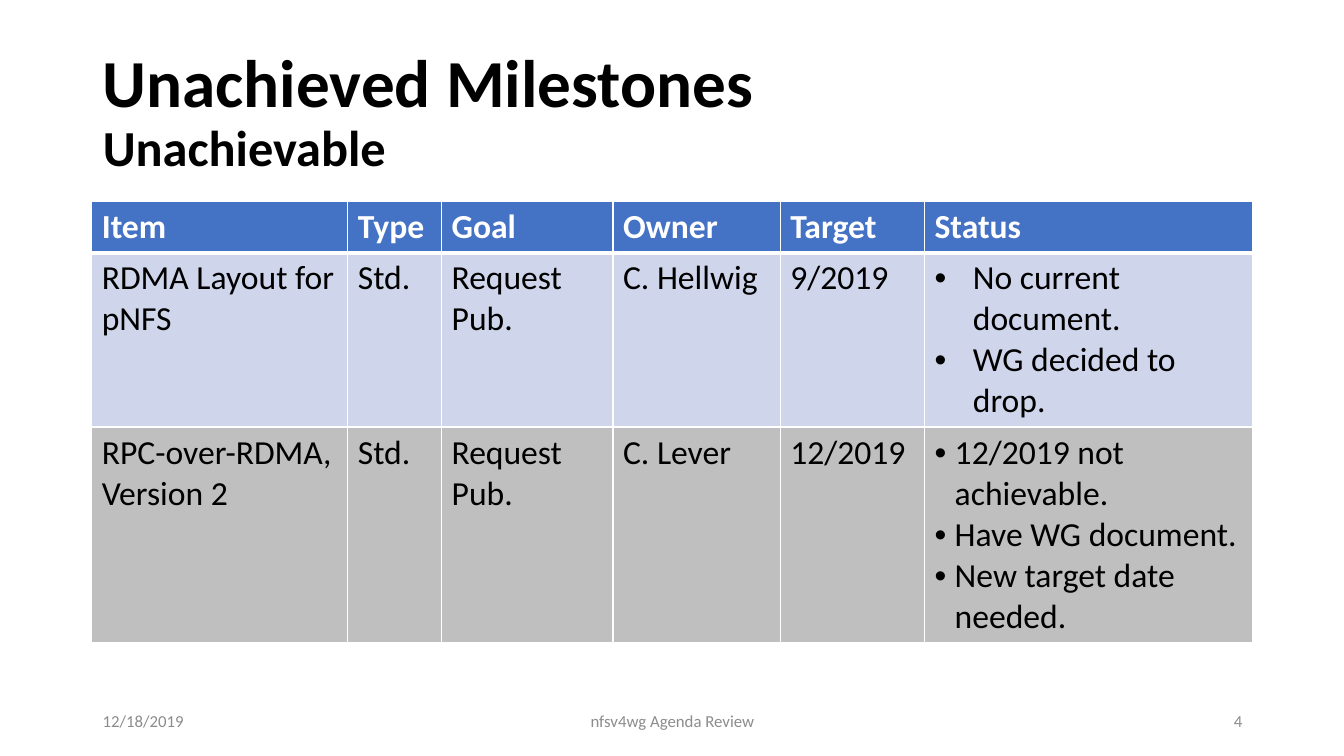
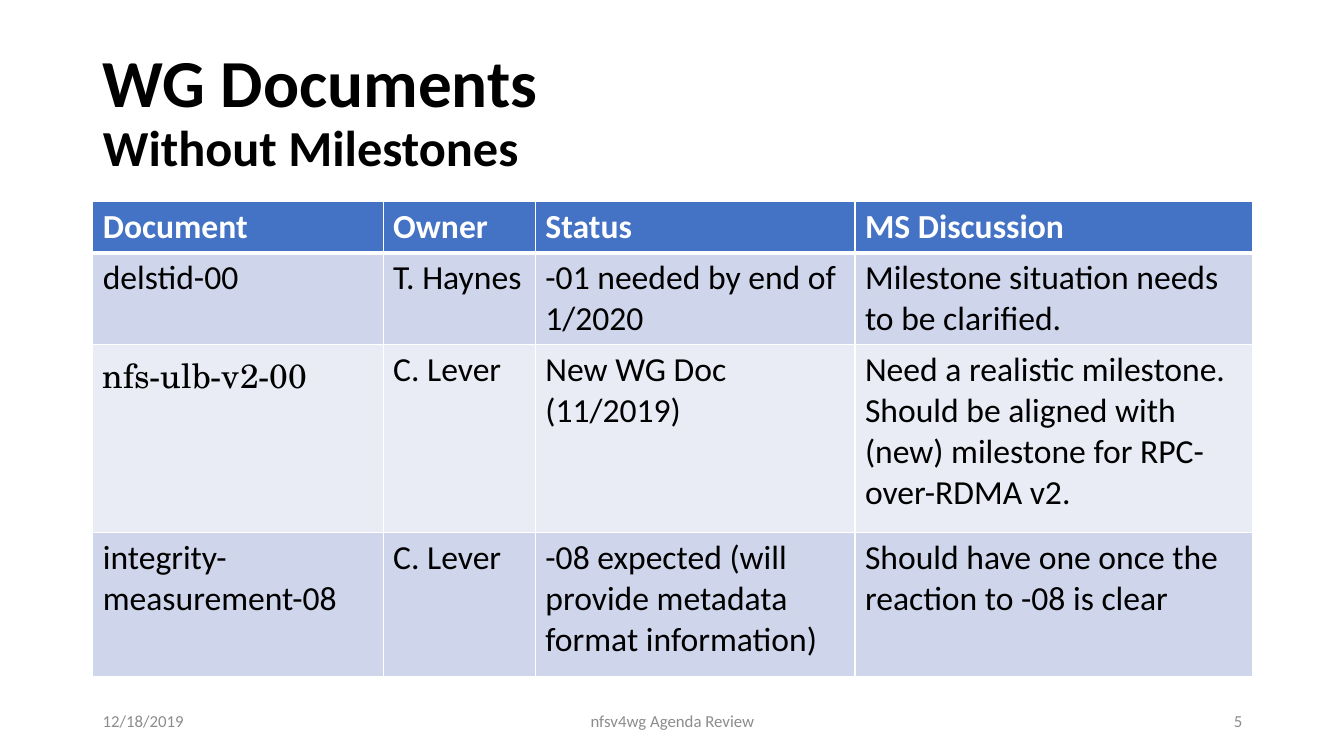
import dataclasses

import lxml.etree
import pptx
import pptx.dml.color
import pptx.enum.text
import pptx.oxml.ns
import pptx.util

Inches = pptx.util.Inches
Pt = pptx.util.Pt
qn = pptx.oxml.ns.qn
Align = pptx.enum.text.PP_ALIGN
Anchor = pptx.enum.text.MSO_ANCHOR


@dataclasses.dataclass(frozen=True)
class Theme:
    font: str = "Calibri"
    serif: str = "TeX Gyre Schola"
    ink: str = "000000"
    white: str = "FFFFFF"
    muted: str = "8C8C8C"
    header: str = "4472C4"
    band: str = "CFD5EA"
    light_band: str = "E9EBF5"
    gray_band: str = "BFBFBF"
    title_size: int = 48
    subtitle_size: int = 36
    table_size: int = 24
    footer_size: int = 12
    rule: int = 1
    header_rule: int = 3


@dataclasses.dataclass(frozen=True)
class Entry:
    lines: tuple
    indent: float = 0
    font: str = Theme.font


THEME = Theme()
TITLE_BOX = (0.92, 0.4, 11.5, 1.45)
FOOTER_BOX = (0.92, 6.95, 11.5, 0.4)
DATE = "12/18/2019"
MEETING = "nfsv4wg Agenda Review"


def rgb(color):
    return pptx.dml.color.RGBColor.from_string(color)


def style_run(run, size, color, bold=False, font=THEME.font):
    run.font.name = font
    run.font.size = Pt(size)
    run.font.bold = bold
    run.font.color.rgb = rgb(color)


def add_title(slide, box, heading, subheading):
    title = slide.shapes.title
    title.left, title.top, title.width, title.height = map(Inches, box)
    frame = title.text_frame
    frame.word_wrap = True
    frame.auto_size = pptx.enum.text.MSO_AUTO_SIZE.NONE
    frame.vertical_anchor = Anchor.MIDDLE
    paragraph = frame.paragraphs[0]
    paragraph.text = f"{heading}\v{subheading}"
    paragraph.alignment = Align.LEFT
    paragraph.line_spacing = 0.9
    for run, size in zip(paragraph.runs, (THEME.title_size, THEME.subtitle_size)):
        style_run(run, size, THEME.ink, bold=True)


def add_footer(slide, box, number):
    left, top, width, height = box
    parts = (
        (DATE, 0, 3, Align.LEFT),
        (MEETING, (width - 4.5) / 2, 4.5, Align.CENTER),
        (str(number), width - 3, 3, Align.RIGHT),
    )
    for text, offset, part_width, alignment in parts:
        part = slide.shapes.add_textbox(
            Inches(left + offset), Inches(top), Inches(part_width), Inches(height))
        frame = part.text_frame
        frame.word_wrap = True
        frame.vertical_anchor = Anchor.MIDDLE
        frame.text = text
        paragraph = frame.paragraphs[0]
        paragraph.alignment = alignment
        style_run(paragraph.runs[0], THEME.footer_size, THEME.muted)


def set_borders(cell, top, bottom):
    properties = cell._tc.get_or_add_tcPr()
    weights = {"lnL": THEME.rule, "lnR": THEME.rule, "lnT": top, "lnB": bottom}
    for position, (side, weight) in enumerate(weights.items()):
        line = lxml.etree.Element(qn(f"a:{side}"), w=str(Pt(weight)))
        fill = lxml.etree.SubElement(line, qn("a:solidFill"))
        lxml.etree.SubElement(fill, qn("a:srgbClr"), val=THEME.white)
        properties.insert(position, line)


def set_bullet(paragraph, indent):
    properties = paragraph._p.get_or_add_pPr()
    properties.set("marL", str(Inches(indent)))
    properties.set("indent", str(-Inches(indent)))
    lxml.etree.SubElement(properties, qn("a:buFont"), typeface="Arial")
    lxml.etree.SubElement(properties, qn("a:buChar"), char="•")


def fill_cell(cell, content, fill, color, bold):
    entry = content if isinstance(content, Entry) else Entry((content,))
    cell.fill.solid()
    cell.fill.fore_color.rgb = rgb(fill)
    cell.text_frame.text = "\n".join(entry.lines)
    for paragraph in cell.text_frame.paragraphs:
        if entry.indent:
            set_bullet(paragraph, entry.indent)
        style_run(paragraph.runs[0], THEME.table_size, color, bold, entry.font)


def add_status_table(slide, origin, columns, heights, bands, rows):
    left, top = origin
    table = slide.shapes.add_table(
        len(rows), len(columns), Inches(left), Inches(top),
        Inches(sum(columns)), Inches(sum(heights))).table
    table.horz_banding = False
    for column, width in zip(table.columns, columns):
        column.width = Inches(width)
    fills = (THEME.header, *bands)
    for index, (contents, height, fill) in enumerate(zip(rows, heights, fills)):
        table.rows[index].height = Inches(height)
        is_header = index == 0
        color = THEME.white if is_header else THEME.ink
        top_rule = THEME.header_rule if index == 1 else THEME.rule
        bottom_rule = THEME.header_rule if is_header else THEME.rule
        for cell, content in zip(table.rows[index].cells, contents):
            fill_cell(cell, content, fill, color, is_header)
            set_borders(cell, top_rule, bottom_rule)


def add_review_slide(deck, number, heading, subheading, **table):
    slide = deck.slides.add_slide(deck.slide_layouts[5])
    add_title(slide, TITLE_BOX, heading, subheading)
    add_status_table(slide, **table)
    add_footer(slide, FOOTER_BOX, number)


def main():
    deck = pptx.Presentation()
    deck.slide_width = Inches(13.33)
    deck.slide_height = Inches(7.5)
    add_review_slide(
        deck, 4, "Unachieved Milestones", "Unachievable",
        origin=(0.91, 2),
        columns=(2.54, 0.93, 1.7, 1.66, 1.43, 3.25),
        heights=(0.5, 1.73, 2.13),
        bands=(THEME.band, THEME.gray_band),
        rows=(
            ("Item", "Type", "Goal", "Owner", "Target", "Status"),
            ("RDMA Layout for pNFS", "Std.", "Request Pub.", "C. Hellwig", "9/2019",
             Entry(("No current document.", "WG decided to drop."), indent=0.38)),
            ("RPC-over-RDMA, Version 2", "Std.", "Request Pub.", "C. Lever", "12/2019",
             Entry(("12/2019 not achievable.", "Have WG document.",
                    "New target date needed."), indent=0.2)),
        ))
    add_review_slide(
        deck, 5, "WG Documents", "Without Milestones",
        origin=(0.92, 2),
        columns=(2.88, 1.51, 3.17, 3.94),
        heights=(0.5, 0.91, 1.86, 1.43),
        bands=(THEME.band, THEME.light_band, THEME.band),
        rows=(
            ("Document", "Owner", "Status", "MS Discussion"),
            ("delstid-00", "T. Haynes", "-01 needed by end of 1/2020",
             "Milestone situation needs to be clarified."),
            (Entry(("nfs-ulb-v2-00",), font=THEME.serif), "C. Lever",
             "New WG Doc (11/2019)",
             Entry(("Need a realistic milestone.",
                    "Should be aligned with (new) milestone for RPC-over-RDMA v2."))),
            ("integrity-measurement-08", "C. Lever",
             "-08 expected (will provide metadata format information)",
             "Should have one once the reaction to -08 is clear"),
        ))
    deck.save("out.pptx")


if __name__ == "__main__":
    main()
